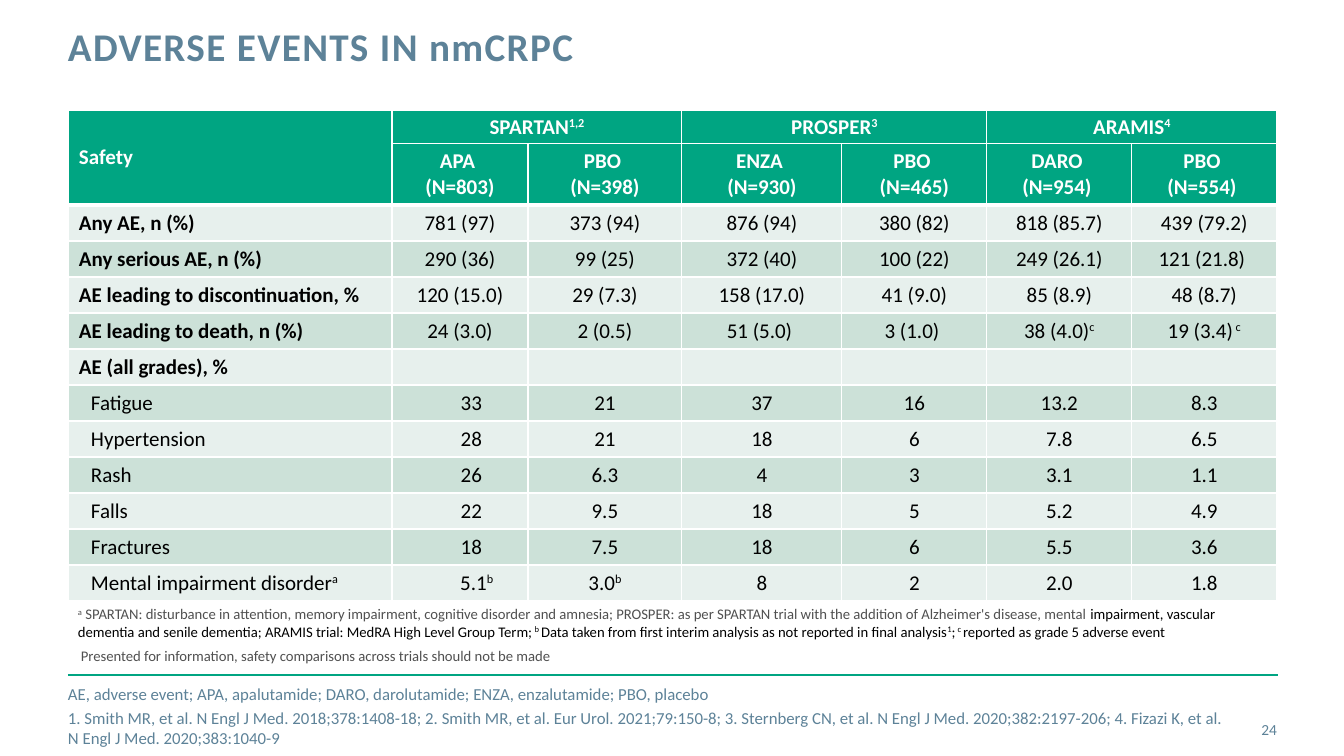
import pptx
import pptx.dml.color
import pptx.enum.shapes
import pptx.enum.text
import pptx.oxml.ns
import pptx.util
from lxml import etree

PX = 914400 / 100.8
FONT = "Calibri"
GREEN, PALE, MINT = "00A582", "E7F0ED", "CCE1D8"
SLATE, GREY, BLACK, WHITE = "5D8298", "505050", "000000", "FFFFFF"

TITLE = "ADVERSE EVENTS IN nmCRPC"
TRIALS = ["SPARTAN^1,2", "PROSPER^3", "ARAMIS^4"]
ARMS = ["APA \n(N=803)", "PBO \n(N=398)", "ENZA \n(N=930)",
        "PBO \n(N=465)", "DARO \n(N=954) ", "PBO \n(N=554) "]
SUMMARY = [
    ["Any AE, n (%)", "781 (97)", "373 (94)", "876 (94)", "380 (82)", "818 (85.7)", "439 (79.2)"],
    ["Any serious AE, n (%)", "290 (36)", "99 (25)", "372 (40)", "100 (22)", "249 (26.1)", "121 (21.8) "],
    ["AE leading to discontinuation, %", "120 (15.0)", "29 (7.3)", "158 (17.0)", "41 (9.0)", "85 (8.9)", "48 (8.7)"],
    ["AE leading to death, n (%)", "24 (3.0)", "2 (0.5)", "51 (5.0) ", "3 (1.0) ", "38 (4.0)^c", "19 (3.4)^ c"],
    ["AE (all grades), %", "", "", "", "", "", ""],
]
EVENTS = [
    ["Fatigue", "\t33", "21", "37", "16", "13.2", "8.3"],
    ["Hypertension", "\t28", "21", "18", "6", "7.8", "6.5"],
    ["Rash", "\t26", "6.3", "4", "3", "3.1", "1.1"],
    ["Falls", "\t22", "9.5", "18", "5", "5.2", "4.9"],
    ["Fractures", "\t18", "7.5", "18", "6", "5.5", "3.6"],
    ["Mental impairment disorder^a", "\t5.1^b", "3.0^b", "8", "2", "2.0", "1.8"],
]
FOOTNOTE = [
    ("^a^ SPARTAN: disturbance in attention, memory impairment, cognitive disorder and amnesia; "
     "PROSPER: as per SPARTAN trial with the addition of Alzheimer's disease, mental ", GREY),
    ("impairment, vascular dementia and senile dementia; ARAMIS trial: MedRA High Level Group Term;"
     "^ b ^Data taken from first interim analysis as not reported in final analysis^1^;^ c ^"
     "reported as grade 5 adverse event", BLACK),
]
CAUTION = [("Presented for information, safety comparisons across trials should not be made", GREY)]
ABBREVIATIONS = [("AE, adverse event; APA, apalutamide; DARO, darolutamide; ENZA, enzalutamide; PBO, placebo", SLATE)]
REFERENCES = [("1. Smith MR, et al. N Engl J Med. 2018;378:1408-18; 2. Smith MR, et al. Eur Urol. 2021;79:150-8; "
               "3. Sternberg CN, et al. N Engl J Med. 2020;382:2197-206; "
               "4. Fizazi K, et al. N Engl J Med. 2020;383:1040-9", SLATE)]
COLUMNS = [324, 136, 154, 160, 145, 145, 145]
ROWS = [33, 61] + [36] * (len(SUMMARY) + len(EVENTS))
ALIGN = pptx.enum.text.PP_ALIGN
MIDDLE = pptx.enum.text.MSO_ANCHOR.MIDDLE


def px(n):
    return pptx.util.Emu(round(n * PX))


def rgb(value):
    return pptx.dml.color.RGBColor.from_string(value)


def add_runs(p, text, size, color, bold=False):
    for i, part in enumerate(text.split("^")):
        if part:
            r = p.add_run()
            r.text = part
            r.font.name, r.font.size, r.font.bold = FONT, pptx.util.Pt(size), bold
            r.font.color.rgb = rgb(color)
            if i % 2:
                r._r.get_or_add_rPr().set("baseline", "30000")


def add_text(s, box, paragraphs, size, inset=(0, 0), anchor=MIDDLE, align=ALIGN.LEFT):
    tf = s.shapes.add_textbox(*map(px, box)).text_frame
    tf.word_wrap, tf.vertical_anchor = True, anchor
    tf.margin_left = tf.margin_right = px(inset[0])
    tf.margin_top = tf.margin_bottom = px(inset[1])
    for i, parts in enumerate(paragraphs):
        p = tf.add_paragraph() if i else tf.paragraphs[0]
        p.alignment = align
        if i:
            p.space_before = pptx.util.Pt(3)
        for text, color in parts:
            add_runs(p, text, size, color)


def add_child(parent, tag, **attributes):
    return etree.SubElement(parent, pptx.oxml.ns.qn(tag), attributes)


def set_borders(cell, top, bottom):
    tc_pr = cell._tc.get_or_add_tcPr()
    for side, width in (("L", 1), ("R", 1), ("T", top), ("B", bottom)):
        ln = add_child(tc_pr, "a:ln" + side, w=str(pptx.util.Pt(width)))
        add_child(add_child(ln, "a:solidFill"), "a:srgbClr", val=WHITE)


def fill_cell(cell, text, row, col):
    header = row < 2
    set_borders(cell, 3 if row == 2 else 1, 3 if row == 1 or row == col == 0 else 1)
    cell.fill.solid()
    cell.fill.fore_color.rgb = rgb(GREEN if header else MINT if row % 2 else PALE)
    cell.vertical_anchor = MIDDLE
    cell.margin_left = cell.margin_right = px(11)
    cell.margin_top = cell.margin_bottom = px(4 if row == 0 else 5)
    event = row >= 2 + len(SUMMARY)
    for i, line in enumerate(text.split("\n")):
        p = cell.text_frame.add_paragraph() if i else cell.text_frame.paragraphs[0]
        p.alignment = ALIGN.CENTER if col else ALIGN.LEFT
        p_pr = p._p.get_or_add_pPr()
        if event and col == 0:
            p_pr.set("marL", str(px(12)))
        if line.startswith("\t"):
            add_child(add_child(p_pr, "a:tabLst"), "a:tab", pos=str(px(44)), algn="dec")
        add_runs(p, line, 15, WHITE if header else BLACK, header or (col == 0 and not event))
        if not line:
            add_child(p._p, "a:endParaRPr", sz="1500")


def add_safety_table(s):
    frame = s.shapes.add_table(len(ROWS), len(COLUMNS), px(68), px(110), px(sum(COLUMNS)), px(sum(ROWS)))
    table = frame.table
    table.first_row = table.horz_banding = False
    for column, width in zip(table.columns, COLUMNS):
        column.width = px(width)
    for row, height in zip(table.rows, ROWS):
        row.height = px(height)
    trial_row = ["Safety"] + [text for trial in TRIALS for text in (trial, "")]
    for i, texts in enumerate([trial_row, [""] + ARMS] + SUMMARY + EVENTS):
        for j, text in enumerate(texts):
            fill_cell(table.cell(i, j), text, i, j)
    table.cell(0, 0).merge(table.cell(1, 0))
    for j in range(1, len(COLUMNS), 2):
        table.cell(0, j).merge(table.cell(0, j + 1))


def main():
    prs = pptx.Presentation()
    prs.slide_width, prs.slide_height = px(1344), px(756)
    s = prs.slides.add_slide(prs.slide_layouts[5])

    title = s.shapes.title
    title.left, title.top, title.width, title.height = map(px, (68, 27, 964, 89))
    tf = title.text_frame
    tf.margin_left = tf.margin_right = tf.margin_top = tf.margin_bottom = 0
    tf.vertical_anchor = pptx.enum.text.MSO_ANCHOR.TOP
    p = tf.paragraphs[0]
    p.alignment, p.line_spacing = ALIGN.LEFT, pptx.util.Pt(30)
    add_runs(p, TITLE, 28, SLATE, True)
    p.runs[0]._r.get_or_add_rPr().set("spc", "100")

    rule = s.shapes.add_connector(pptx.enum.shapes.MSO_CONNECTOR.STRAIGHT, px(68), px(675), px(1278), px(675))
    rule.line.color.rgb, rule.line.width = rgb(GREEN), pptx.util.Pt(2)
    add_child(rule._element.spPr, "a:effectLst")

    add_safety_table(s)
    top = pptx.enum.text.MSO_ANCHOR.TOP
    add_text(s, (68, 600, 1209, 45), [FOOTNOTE], 10.5, (10, 5), top)
    add_text(s, (71, 642, 1055, 28), [CAUTION], 10.5, (10, 5), top)
    add_text(s, (68, 696, 1159, 40), [ABBREVIATIONS, REFERENCES], 12)
    add_text(s, (1190, 709, 87, 40), [[("24", SLATE)]], 11, align=ALIGN.RIGHT)
    prs.save("out.pptx")


if __name__ == "__main__":
    main()
